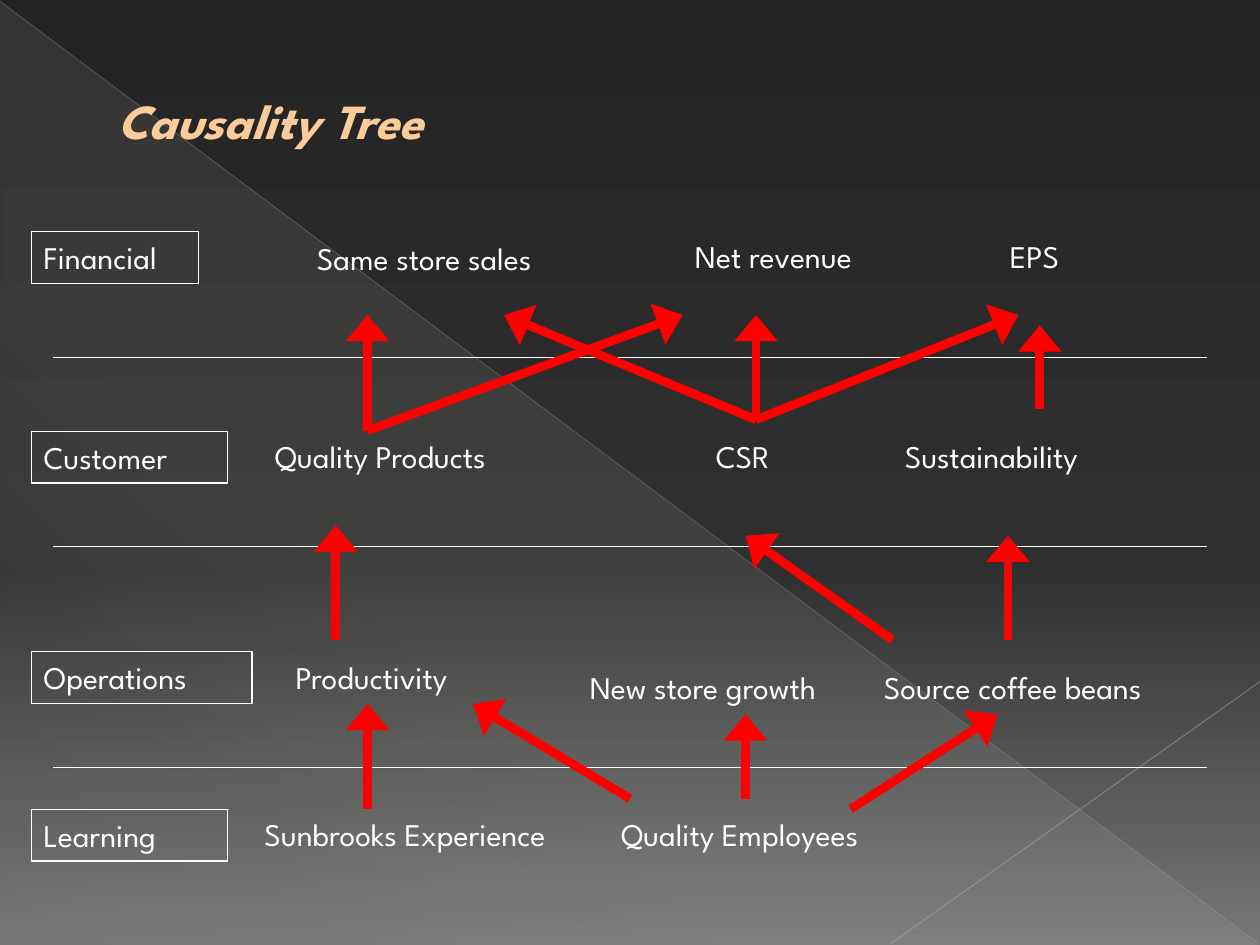
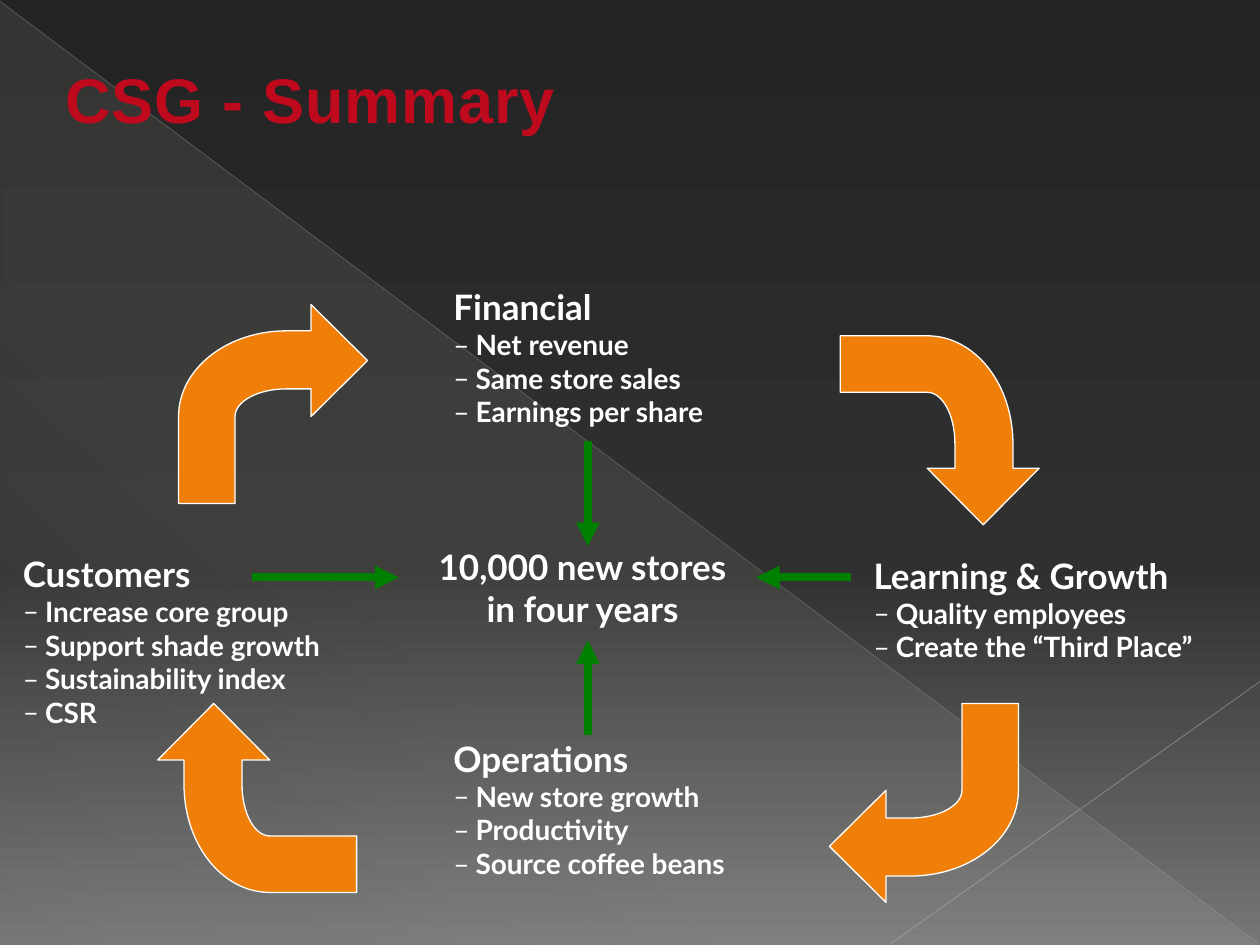
from dataclasses import dataclass
from typing import Any, NamedTuple

from lxml import etree
from pptx import Presentation
from pptx.dml.color import RGBColor
from pptx.enum.shapes import MSO_CONNECTOR, MSO_SHAPE
from pptx.enum.text import MSO_ANCHOR, MSO_AUTO_SIZE, PP_ALIGN
from pptx.oxml.ns import qn
from pptx.util import Cm, Pt

STRAIGHT = MSO_CONNECTOR.STRAIGHT
RECT = MSO_SHAPE.RECTANGLE
TRIANGLE = MSO_SHAPE.RIGHT_TRIANGLE
TOP, MIDDLE = MSO_ANCHOR.TOP, MSO_ANCHOR.MIDDLE
LEFT, CENTER = PP_ALIGN.LEFT, PP_ALIGN.CENTER
NO_FIT = MSO_AUTO_SIZE.NONE


@dataclass(frozen=True)
class Theme:
    text: str = "FFFFFF"
    peach: str = "FBCC9A"
    crimson: str = "BF091D"
    red: str = "FF0000"
    green: str = "008000"
    orange: str = "F07F09"
    backdrop: tuple = ((0, "242424", 100), (60, "303030", 100), (100, "767676", 100))
    sheen: tuple = ((0, "E3DED1", 10), (70, "E3DED1", 8), (100, "E3DED1", 1))
    tree_font: str = "League Spartan"
    summary_font: str = "Lato"
    summary_title_font: str = "Arial"
    tree_title: int = 28
    summary_title: int = 36
    node: int = 18
    heading: int = 20
    item: int = 16


T = Theme()


class Box(NamedTuple):
    x: float
    y: float
    w: float
    h: float

    def emu(self) -> list[int]:
        return [Cm(v) for v in self]


class Node(NamedTuple):
    text: str
    x: float
    y: float
    w: float


class Stroke(NamedTuple):
    color: str
    width: float
    opacity: int = 100
    head: str = ""


class Segment(NamedTuple):
    x1: float
    y1: float
    x2: float
    y2: float


class Block(NamedTuple):
    box: Box
    lines: list[str]
    items: list[str]
    align: Any = LEFT


class BentArrow(NamedTuple):
    x: float
    y: float
    rotation: int


THIN = Stroke(T.text, 0.75)
CAUSE = Stroke(T.red, 5, head="lg")
GOAL = Stroke(T.green, 4.5, head="med")

DIVIDERS = [7.2, 11.01, 15.47]
PERSPECTIVES = [
    Node("Financial", 0.63, 4.67, 3.38),
    Node("Customer", 0.63, 8.7, 3.96),
    Node("Operations", 0.63, 13.14, 4.45),
    Node("Learning", 0.63, 16.32, 3.96),
]
MEASURES = [
    Node("Same store sales", 6.14, 4.7, 5.72),
    Node("Net revenue", 13.76, 4.65, 4.01),
    Node("EPS", 20.11, 4.65, 1.91),
    Node("Quality Products", 5.29, 8.69, 5.51),
    Node("CSR", 14.18, 8.69, 2.11),
    Node("Sustainability", 17.99, 8.69, 4.45),
    Node("Productivity", 5.71, 13.14, 4.24),
    Node("New store growth", 11.64, 13.35, 6.15),
    Node("Source coffee beans", 17.57, 13.35, 6.55),
    Node("Sunbrooks Experience", 5.08, 16.31, 7.62),
    Node("Quality Employees", 12.27, 16.31, 6.15),
]
CAUSES = [
    Segment(15.03, 16.1, 15.03, 14.4),
    Segment(7.41, 16.31, 7.41, 14.19),
    Segment(17.15, 16.31, 20.11, 14.4),
    Segment(12.7, 16.1, 9.53, 14.19),
    Segment(6.77, 12.9, 6.77, 10.59),
    Segment(17.99, 12.9, 15.03, 10.8),
    Segment(20.32, 12.9, 20.32, 10.8),
    Segment(7.41, 8.68, 7.41, 6.35),
    Segment(15.24, 8.46, 20.53, 6.35),
    Segment(20.96, 8.25, 20.96, 6.56),
    Segment(15.24, 8.46, 15.24, 6.35),
    Segment(7.41, 8.68, 13.76, 6.35),
    Segment(15.24, 8.46, 10.16, 6.35),
]
BLOCKS = [
    Block(Box(7.83, 10.58, 7.83, 2.54), ["10,000 new stores", "in four years"], [], CENTER),
    Block(Box(17.36, 11, 8.04, 2.54), ["Learning & Growth"],
          ["Quality employees", "Create the “Third Place”"]),
    Block(Box(8.89, 5.93, 8.68, 2.54), ["Financial"],
          ["Net revenue", "Same store sales", "Earnings per share"]),
    Block(Box(0.21, 11.01, 7.83, 3.81), ["Customers"],
          ["Increase core group", "Support shade growth", "Sustainability index", "CSR"]),
    Block(Box(8.89, 14.61, 7.83, 3.39), ["Operations"],
          ["New store growth", "Productivity", "Source coffee beans"]),
]
GOALS = [
    Segment(5.08, 11.64, 8.04, 11.64),
    Segment(11.85, 8.89, 11.85, 11.01),
    Segment(17.15, 11.64, 15.24, 11.64),
    Segment(11.85, 14.82, 11.85, 12.91),
]
CYCLE = [
    BentArrow(17.04, 6.67, 90),
    BentArrow(3.6, 6.14, 0),
    BentArrow(3.28, 14.08, 270),
    BentArrow(16.72, 14.18, 180),
]
ARROW_CORNERS = [(3.81, 1.13), (2.67, 0), (2.67, 0.53), (2.18, 0.53), (0, 2.26), (0, 4.01),
                 (1.14, 4.01), (1.14, 2.26), (2.18, 1.7), (2.67, 1.7), (2.67, 2.26)]
ARROW_BENDS = {4: [(0.97, 0.53), (0, 1.3)], 8: [(1.14, 1.95), (1.6, 1.7)]}


def assign(obj: Any, values: dict[str, Any]) -> None:
    for name, value in values.items():
        setattr(obj, name, value)


def set_gradient(parent: Any, stops: tuple, angle: int) -> None:
    grad = etree.Element(qn("a:gradFill"), rotWithShape="1")
    stop_list = etree.SubElement(grad, qn("a:gsLst"))
    for position, color, opacity in stops:
        gs = etree.SubElement(stop_list, qn("a:gs"), pos=str(position * 1000))
        clr = etree.SubElement(gs, qn("a:srgbClr"), val=color)
        etree.SubElement(clr, qn("a:alpha"), val=str(opacity * 1000))
    etree.SubElement(grad, qn("a:lin"), ang=str(angle * 60000), scaled="0")
    parent.replace(parent.find(qn("a:solidFill")), grad)


def set_line(sp: Any, stroke: Stroke) -> None:
    sp.line.color.rgb = RGBColor.from_string(stroke.color)
    sp.line.width = Pt(stroke.width)


def add_line(slide: Any, seg: Segment, stroke: Stroke) -> Any:
    cx = slide.shapes.add_connector(STRAIGHT, *[Cm(v) for v in seg])
    set_line(cx, stroke)
    sp_pr = cx.element.spPr
    ln = sp_pr.find(qn("a:ln"))
    if stroke.opacity < 100:
        clr = ln.find(f".//{qn('a:srgbClr')}")
        etree.SubElement(clr, qn("a:alpha"), val=str(stroke.opacity * 1000))
    if stroke.head:
        etree.SubElement(ln, qn("a:tailEnd"), type="triangle", w=stroke.head, len="med")
    etree.SubElement(sp_pr, qn("a:effectLst"))
    return cx


def add_run(p: Any, text: str, color: str, fmt: dict[str, Any]) -> None:
    r = p.add_run()
    r.text = text
    assign(r.font, fmt)
    r.font.color.rgb = RGBColor.from_string(color)


def set_frame(sp: Any, anchor: Any) -> Any:
    tf = sp.text_frame
    assign(tf, {"word_wrap": True, "auto_size": NO_FIT, "vertical_anchor": anchor})
    return tf


def add_title(slide: Any, text: str, box: Box, anchor: Any, color: str,
              fmt: dict[str, Any], spacing: int = 0) -> None:
    sp = slide.shapes.title
    assign(sp, dict(zip(("left", "top", "width", "height"), box.emu())))
    p = set_frame(sp, anchor).paragraphs[0]
    p.alignment = LEFT
    add_run(p, text, color, fmt)
    for r_pr in sp.element.iter(qn("a:rPr")):
        r_pr.set("spc", str(spacing))


def add_node(slide: Any, node: Node, framed: bool) -> None:
    box = Box(node.x, node.y, node.w, 1.04 if framed else 1.02).emu()
    if framed:
        sp = slide.shapes.add_shape(RECT, *box)
        sp.shadow.inherit = False
        sp.fill.background()
        set_line(sp, THIN)
    else:
        sp = slide.shapes.add_textbox(*box)
    p = set_frame(sp, TOP).paragraphs[0]
    p.alignment = LEFT
    add_run(p, node.text, T.text, {"name": T.tree_font, "size": Pt(T.node)})


def add_block(slide: Any, block: Block) -> None:
    sp = slide.shapes.add_textbox(*block.box.emu())
    tf = set_frame(sp, MIDDLE)
    for i, text in enumerate(block.lines + block.items):
        p = tf.paragraphs[0] if i == 0 else tf.add_paragraph()
        p.alignment = block.align
        size = T.heading if i < len(block.lines) else T.item
        add_run(p, text, T.text, {"name": T.summary_font, "size": Pt(size), "bold": True})
    indent = Cm(0.45)
    for p_pr in list(sp.element.iter(qn("a:pPr")))[len(block.lines):]:
        p_pr.set("marL", str(indent))
        p_pr.set("indent", str(-indent))
        etree.SubElement(p_pr, qn("a:buFont"), typeface=T.summary_font)
        etree.SubElement(p_pr, qn("a:buChar"), char="–")


def add_bent_arrow(slide: Any, arrow: BentArrow) -> None:
    points = [(Cm(x), Cm(y)) for x, y in ARROW_CORNERS]
    builder = slide.shapes.build_freeform(*points[0])
    builder.add_line_segments(points[1:], close=True)
    sp = builder.convert_to_shape(Cm(arrow.x), Cm(arrow.y))
    segments = list(sp.element.iter(qn("a:lnTo")))
    for corner, controls in ARROW_BENDS.items():
        segment = segments[corner - 1]
        curve = etree.Element(qn("a:cubicBezTo"))
        for x, y in controls:
            etree.SubElement(curve, qn("a:pt"), x=str(Cm(x)), y=str(Cm(y)))
        curve.append(segment[0])
        segment.getparent().replace(segment, curve)
    sp.shadow.inherit = False
    sp.rotation = arrow.rotation
    sp.fill.solid()
    sp.fill.fore_color.rgb = RGBColor.from_string(T.orange)
    set_line(sp, THIN)


def decorate_master(master: Any, slide: Any) -> None:
    master.background.fill.solid()
    set_gradient(master.element.find(f".//{qn('p:bgPr')}"), T.backdrop, 90)
    sp = slide.shapes.add_shape(TRIANGLE, *Box(0.02, 0.04, 25.36, 19).emu())
    sp.shadow.inherit = False
    sp.fill.solid()
    set_gradient(sp.element.spPr, T.sheen, 133)
    sp.line.fill.background()
    rays = [add_line(slide, Segment(0, 0.03, 25.37, 19.02), Stroke("B6B6B6", 0.39, 35)),
            add_line(slide, Segment(25.4, 13.74, 17.96, 19.02), Stroke("BFBFBF", 0.47, 45))]
    for i, part in enumerate([sp, *rays]):
        master.shapes.element.insert(2 + i, part.element)


def build_tree(slide: Any) -> None:
    add_title(slide, "Causality Tree", Box(2.11, 1.7, 19.89, 1.45), TOP, T.peach,
              {"name": T.tree_font, "size": Pt(T.tree_title), "bold": True, "italic": True})
    for y in DIVIDERS:
        add_line(slide, Segment(1.06, y, 24.34, y), THIN)
    for node in PERSPECTIVES:
        add_node(slide, node, True)
    for node in MEASURES:
        add_node(slide, node, False)
    for seg in CAUSES:
        add_line(slide, seg, CAUSE)


def build_summary(slide: Any) -> None:
    add_title(slide, "CSG - Summary", Box(1.06, 1.27, 18.21, 1.42), MIDDLE, T.crimson,
              {"name": T.summary_title_font, "size": Pt(T.summary_title), "bold": True}, 50)
    for block in BLOCKS:
        add_block(slide, block)
    for seg in GOALS:
        add_line(slide, seg, GOAL)
    for arrow in CYCLE:
        add_bent_arrow(slide, arrow)


def main() -> None:
    prs = Presentation()
    assign(prs, {"slide_width": Cm(25.4), "slide_height": Cm(19.05)})
    tree, summary = [prs.slides.add_slide(prs.slide_layouts[5]) for _ in range(2)]
    decorate_master(prs.slide_master, tree)
    build_tree(tree)
    build_summary(summary)
    prs.save("out.pptx")


if __name__ == "__main__":
    main()
